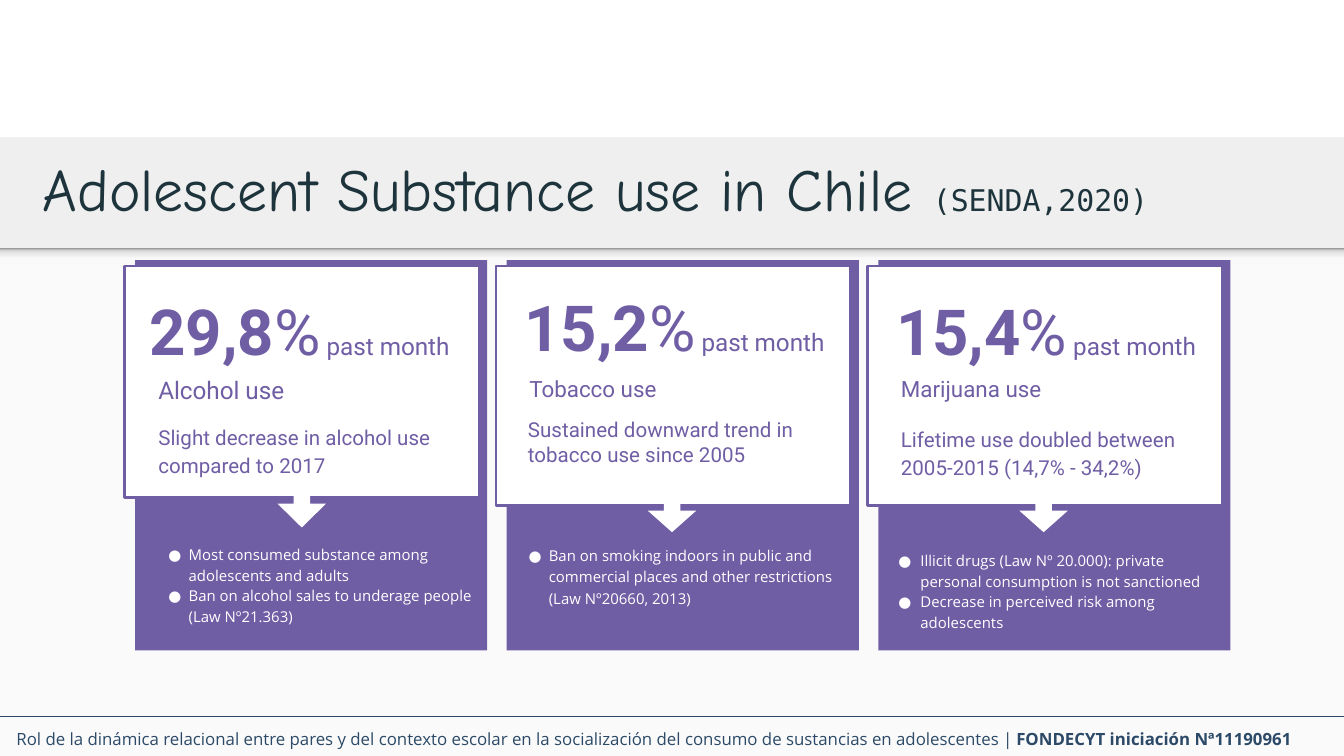
"""Build a slide of three cards on adolescent substance use in Chile."""
from dataclasses import dataclass
from typing import NamedTuple, Optional

from lxml.etree import SubElement
from pptx import Presentation
from pptx.dml.color import RGBColor
from pptx.enum.shapes import MSO_CONNECTOR, MSO_SHAPE
from pptx.enum.text import MSO_ANCHOR, PP_ALIGN
from pptx.oxml.ns import qn
from pptx.util import Pt

SCALE = 4572
WIDTH, HEIGHT = 2000, 1125
INSET = 20


class Box(NamedTuple):
    x: int
    y: int
    w: int
    h: int

    def emu(self) -> list[int]:
        return [side * SCALE for side in self]


class Style(NamedTuple):
    face: str
    size: int
    color: str
    bold: bool = False


@dataclass(frozen=True)
class Theme:
    back: str = "EFEFEF"
    body: str = "FAFAFA"
    white: str = "FFFFFF"
    main: str = "705EA5"
    navy: str = "2C4A68"
    fade: tuple = ((0, "F9F9F9"), (36, "F9F9F9"), (80, "DEDEDE"), (100, "999999"))
    title: Style = Style("Comic Neue", 32, "1D343C")
    cite: Style = Style("DejaVu Sans Mono", 16, "1D343C")
    foot: Style = Style("Open Sans", 9, navy)
    strong: Style = Style("Open Sans", 9, navy, True)
    stat: Style = Style("Roboto", 34, main, True)
    sign: Style = Style("Roboto", 34, main)
    month: Style = Style("Roboto", 13, main)
    trend: Style = Style("Roboto", 11, main)
    note: Style = Style("Open Sans", 8, white)


THEME = Theme()


@dataclass(frozen=True)
class Card:
    """One card, with box places across measured from its panel."""
    rate: str
    label: str
    trend: str
    notes: tuple[str, ...]
    stat_box: Box
    label_box: Box
    trend_box: Box
    note_box: Box
    arrow: Box = Box(218, 728, 56, 72)
    frame: int = 356
    size: int = 12
    lead: float = 1.15
    note_lead: float = 1.15
    hang: int = 30


CARDS = (
    Card("29,8", "Alcohol use", "Slight decrease in alcohol use compared to 2017",
         ("Most consumed substance among adolescents and adults",
          "Ban on alcohol sales to underage people (Law Nº21.363)"),
         Box(2, 415, 496, 152), Box(15, 539, 468, 98), Box(15, 607, 468, 134),
         Box(0, 788, 524, 248), arrow=Box(217, 718, 62, 72), frame=344, size=13),
    Card("15,2", "Tobacco use", "Sustained downward trend in tobacco use since 2005",
         ("Ban on smoking indoors in public and commercial places and other "
          "restrictions (Law Nº20660, 2013)",),
         Box(7, 409, 494, 96), Box(14, 538, 468, 86), Box(12, 601, 468, 136),
         Box(-17, 788, 524, 154), lead=1, note_lead=1.2),
    Card("15,4", "Marijuana use",
         "Lifetime use doubled between 2005-2015 (14,7% - 34,2%)",
         ("Illicit drugs (Law Nº 20.000): private personal consumption is not sanctioned",
          "Decrease in perceived risk among adolescents"),
         Box(7, 414, 494, 96), Box(14, 538, 468, 86), Box(14, 610, 468, 126),
         Box(-17, 797, 524, 146), hang=33),
)


def tint(code: str) -> RGBColor:
    return RGBColor.from_string(code)


def apply(font, style: Style) -> None:
    font.name, font.size, font.bold = style.face, Pt(style.size), style.bold
    font.color.rgb = tint(style.color)


def shape(shapes, box: Box, fill: str, edge: Optional[str] = None,
          kind=MSO_SHAPE.RECTANGLE):
    item = shapes.add_shape(kind, *box.emu())
    item.shadow.inherit = False
    item.fill.solid()
    item.fill.fore_color.rgb = tint(fill)
    if edge:
        item.line.color.rgb = tint(edge)
        item.line.width = Pt(1.5)
    else:
        item.line.fill.background()
    return item


def frame(shapes, box: Box, anchor=MSO_ANCHOR.TOP):
    text = shapes.add_textbox(*box.emu()).text_frame
    text.word_wrap = True
    text.vertical_anchor = anchor
    text.margin_left = text.margin_right = INSET * SCALE
    text.margin_top = text.margin_bottom = INSET * SCALE
    return text


def bullet(para, hang: int) -> None:
    props = para._p.get_or_add_pPr()
    props.set("marL", str(60 * SCALE))
    props.set("indent", str(-hang * SCALE))
    color = SubElement(props, qn("a:buClr"))
    SubElement(color, qn("a:srgbClr"), val=THEME.white)
    SubElement(props, qn("a:buFont"), typeface=THEME.note.face)
    SubElement(props, qn("a:buChar"), char="●")


def plain(shapes, box: Box, lines: tuple[str, ...], style: Style,
          lead: float = 1, hang: int = 0) -> None:
    text = frame(shapes, box)
    for rank, line in enumerate(lines):
        para = text.add_paragraph() if rank else text.paragraphs[0]
        if hang:
            bullet(para, hang)
        para.text = line
        para.line_spacing = float(lead)
        apply(para.font, style)


def mixed(shapes, box: Box, parts: tuple[tuple[str, Style], ...],
          anchor=MSO_ANCHOR.TOP, align=PP_ALIGN.LEFT) -> None:
    para = frame(shapes, box, anchor).paragraphs[0]
    para.alignment = align
    for words, style in parts:
        run = para.add_run()
        run.text = words
        apply(run.font, style)


def shade(shapes, box: Box) -> None:
    band = shape(shapes, box, THEME.body)
    band.fill.gradient()
    band.fill.gradient_angle = 90
    stops = band._element.spPr.find(qn("a:gradFill")).find(qn("a:gsLst"))
    for stop in list(stops):
        stops.remove(stop)
    for place, code in THEME.fade:
        stop = SubElement(stops, qn("a:gs"), pos=str(place * 1000))
        SubElement(stop, qn("a:srgbClr"), val=code)


def base(shapes) -> None:
    shape(shapes, Box(0, 369, WIDTH, HEIGHT - 369), THEME.body)
    shade(shapes, Box(0, 369, WIDTH, 24))
    shape(shapes, Box(0, 0, WIDTH, 204), THEME.white)
    mixed(shapes, Box(0, 1067, 1946, 66), (
        ("Rol de la dinámica relacional entre pares y del contexto escolar en la "
         "socialización del consumo de sustancias en adolescentes |", THEME.foot),
        (" FONDECYT iniciación Nª11190961", THEME.strong),
    ), MSO_ANCHOR.MIDDLE, PP_ALIGN.CENTER)
    rule = shapes.add_connector(MSO_CONNECTOR.STRAIGHT, *Box(0, 1066, 2004, 1066).emu())
    rule.line.color.rgb = tint(THEME.navy)
    rule.line.width = Pt(0.75)
    SubElement(rule._element.spPr, qn("a:effectLst"))
    mixed(shapes, Box(44, 184, 1798, 168), (
        ("Adolescent Substance use in Chile ", THEME.title),
        ("(SENDA,2020)", THEME.cite),
    ), MSO_ANCHOR.BOTTOM)


def draw(shapes, card: Card, left: int) -> None:
    def place(box: Box) -> Box:
        return box._replace(x=left + box.x)

    group = shapes.add_group_shape().shapes
    shape(group, Box(left, 387, 524, 581), THEME.main)
    shape(group, Box(left - 16, 396, 528, card.frame), THEME.white, THEME.main)
    plain(group, place(card.label_box), (card.label,),
          THEME.month._replace(size=card.size))
    plain(group, place(card.trend_box), (card.trend,), THEME.trend, card.lead)
    mixed(group, place(card.stat_box), (
        (card.rate, THEME.stat), ("%", THEME.sign), (" past month", THEME.month)))
    arrow = shape(group, place(card.arrow), THEME.white, kind=MSO_SHAPE.RIGHT_ARROW)
    arrow.rotation = 90
    arrow.adjustments[0], arrow.adjustments[1] = 0.34, 0.57
    plain(group, place(card.note_box), card.notes, THEME.note,
          card.note_lead, card.hang)


def main() -> None:
    deck = Presentation()
    deck.slide_width, deck.slide_height = WIDTH * SCALE, HEIGHT * SCALE
    slide = deck.slides.add_slide(deck.slide_layouts[6])
    slide.background.fill.solid()
    slide.background.fill.fore_color.rgb = tint(THEME.back)
    base(slide.shapes)
    for rank, card in enumerate(CARDS):
        draw(slide.shapes, card, 201 + 553 * rank)
    deck.save("out.pptx")


if __name__ == "__main__":
    main()
